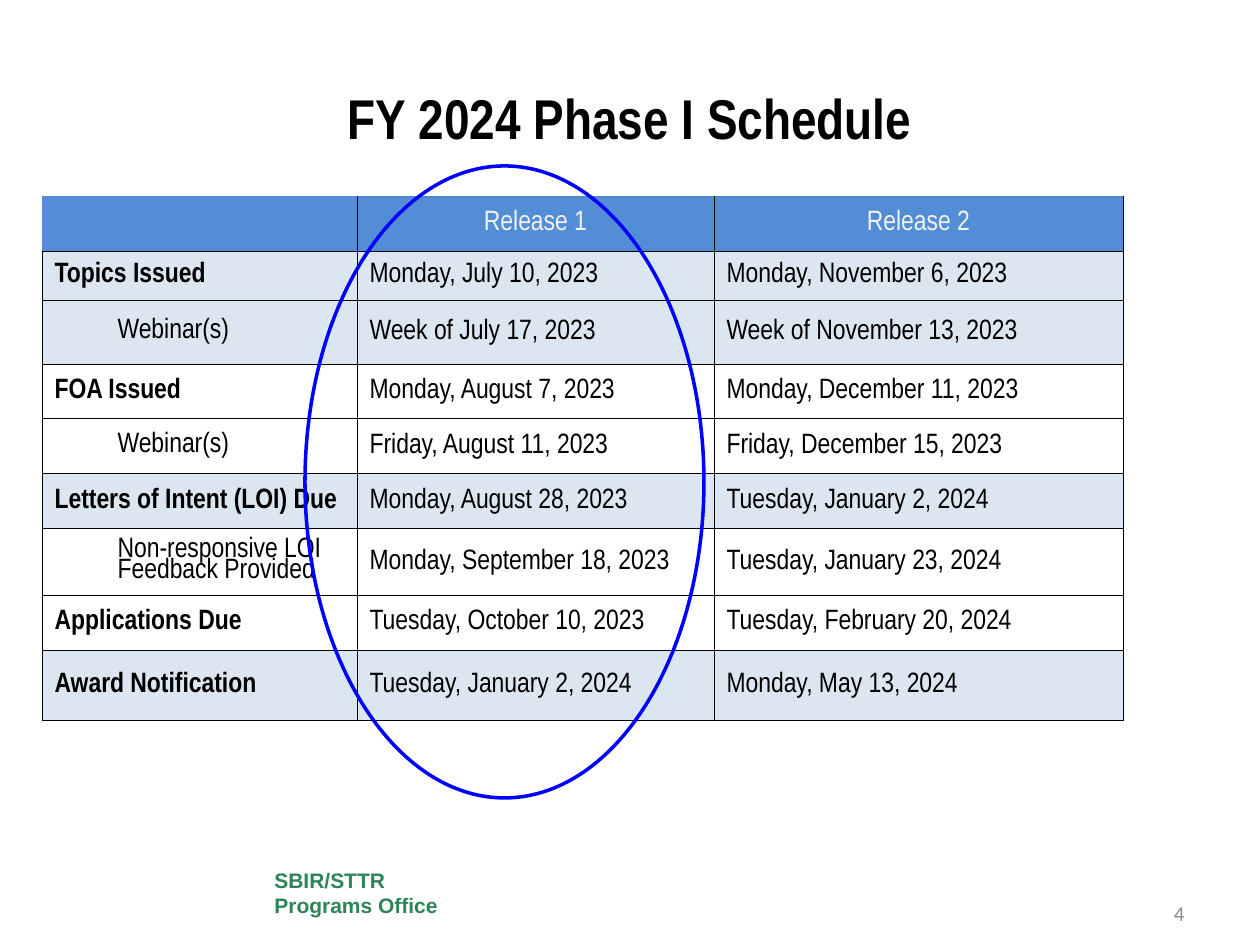
from dataclasses import dataclass
from typing import NamedTuple

from lxml import etree
from pptx import Presentation
from pptx.dml.color import RGBColor
from pptx.enum.shapes import MSO_SHAPE
from pptx.enum.text import MSO_ANCHOR, PP_ALIGN
from pptx.oxml.ns import qn
from pptx.util import Emu, Pt

LEFT, CENTER, RIGHT = PP_ALIGN.LEFT, PP_ALIGN.CENTER, PP_ALIGN.RIGHT
MIDDLE, BOTTOM = MSO_ANCHOR.MIDDLE, MSO_ANCHOR.BOTTOM
RECTANGLE, CONNECTOR_CIRCLE = MSO_SHAPE.RECTANGLE, MSO_SHAPE.FLOWCHART_CONNECTOR

PX_PER_INCH = 126


def px(length: int) -> Emu:
    return Emu(round(length * 914400 / PX_PER_INCH))


@dataclass(frozen=True)
class Theme:
    black: str = "000000"
    white: str = "FFFFFF"
    header: str = "538DD5"
    header_text: str = "F2F2F2"
    header_top: str = "4F81BD"
    band: str = "DCE6F1"
    highlight: str = "0000FF"
    office: str = "2C8458"
    page: str = "8C8C8C"
    narrow: str = "Arial Narrow"
    title_size: int = 32
    table_size: int = 16
    footer_size: int = 12
    border_width: float = 0.5
    highlight_width: int = 2


THEME = Theme()


class Box(NamedTuple):
    left: int
    top: int
    width: int
    height: int

    def emu(self) -> list[Emu]:
        return [px(length) for length in self]


class Style(NamedTuple):
    font: str
    size: int
    color: str
    bold: bool = False
    align: PP_ALIGN = LEFT


class Milestone(NamedTuple):
    label: str
    release_1: str
    release_2: str
    height: int
    banded: bool = False
    sub_step: bool = False


COLUMN_WIDTHS = (315, 357, 409)
HEADER_HEIGHT = 55
SUB_STEP_INDENT = 63
HEADINGS = ("", "Release 1", "Release 2")
MILESTONES = (
    Milestone("Topics Issued", "Monday, July 10, 2023", "Monday, November 6, 2023", 49, banded=True),
    Milestone("Webinar(s)", "Week of July 17, 2023", "Week of November 13, 2023", 64,
              banded=True, sub_step=True),
    Milestone("FOA Issued", "Monday, August 7, 2023", "Monday, December 11, 2023", 55),
    Milestone("Webinar(s)", "Friday, August 11, 2023", "Friday, December 15, 2023", 55, sub_step=True),
    Milestone("Letters of Intent (LOI) Due", "Monday, August 28, 2023", "Tuesday, January 2, 2024", 55,
              banded=True),
    Milestone("Non-responsive LOI Feedback Provided", "Monday, September 18, 2023",
              "Tuesday, January 23, 2024", 65, sub_step=True),
    Milestone("Applications Due", "Tuesday, October 10, 2023", "Tuesday, February 20, 2024", 55),
    Milestone("Award Notification", "Tuesday, January 2, 2024", "Monday, May 13, 2024", 70, banded=True),
)


def write(frame, text: str, style: Style) -> None:
    frame.text = text
    paragraph = frame.paragraphs[0]
    paragraph.alignment = style.align
    for run in paragraph.runs:
        run.font.name = style.font
        run.font.size = Pt(style.size)
        run.font.bold = style.bold
        run.font.color.rgb = RGBColor.from_string(style.color)


def add_text(slide, box: Box, text: str, style: Style, anchor: MSO_ANCHOR = MIDDLE):
    frame = slide.shapes.add_textbox(*box.emu()).text_frame
    frame.word_wrap = True
    frame.vertical_anchor = anchor
    write(frame, text, style)
    return frame


def fill_cell(cell, text: str, style: Style, fill: str, borders: dict[str, str]) -> None:
    cell.vertical_anchor = MIDDLE
    write(cell.text_frame, text, style)
    cell.fill.solid()
    cell.fill.fore_color.rgb = RGBColor.from_string(fill)
    # Border lines come before the fill in the cell properties
    properties = cell._tc.get_or_add_tcPr()
    for position, side in enumerate(("L", "R", "T", "B")):
        line = etree.Element(qn(f"a:ln{side}"), w=str(Pt(THEME.border_width)))
        if side in borders:
            paint = etree.SubElement(line, qn("a:solidFill"))
            etree.SubElement(paint, qn("a:srgbClr"), val=borders[side])
        else:
            etree.SubElement(line, qn("a:noFill"))
        properties.insert(position, line)


def add_schedule(slide, left: int, top: int) -> None:
    heights = [HEADER_HEIGHT, *(milestone.height for milestone in MILESTONES)]
    box = Box(left, top, sum(COLUMN_WIDTHS), sum(heights))
    schedule = slide.shapes.add_table(len(heights), len(COLUMN_WIDTHS), *box.emu()).table
    for column, width in zip(schedule.columns, COLUMN_WIDTHS):
        column.width = px(width)
    for row, height in zip(schedule.rows, heights):
        row.height = px(height)

    # Header row: the corner cell is open on its left and top
    heading_style = Style(THEME.narrow, THEME.table_size, THEME.header_text, align=CENTER)
    corner = dict.fromkeys("RB", THEME.black)
    release = {**dict.fromkeys("LRB", THEME.black), "T": THEME.header_top}
    for column, heading in enumerate(HEADINGS):
        fill_cell(schedule.cell(0, column), heading, heading_style, THEME.header,
                  release if heading else corner)

    # Milestone rows
    grid = dict.fromkeys("LRTB", THEME.black)
    date_style = Style(THEME.narrow, THEME.table_size, THEME.black)
    for row, milestone in enumerate(MILESTONES, start=1):
        fill = THEME.band if milestone.banded else THEME.white
        label_style = date_style._replace(bold=not milestone.sub_step)
        fill_cell(schedule.cell(row, 0), milestone.label, label_style, fill, grid)
        for column, date in enumerate((milestone.release_1, milestone.release_2), start=1):
            fill_cell(schedule.cell(row, column), date, date_style, fill, grid)
        if milestone.sub_step:
            label = schedule.cell(row, 0).text_frame.paragraphs[0]
            label.level = 1
            label.line_spacing = 0.8
            label._p.get_or_add_pPr().set("marL", str(px(SUB_STEP_INDENT)))


def add_office(slide, box: Box) -> None:
    office = slide.shapes.add_shape(RECTANGLE, *box.emu())
    office.shadow.inherit = False
    office.fill.solid()
    office.fill.fore_color.rgb = RGBColor.from_string(THEME.white)
    office.line.fill.background()
    office.text_frame.word_wrap = True
    office.text_frame.vertical_anchor = MIDDLE
    write(office.text_frame, "SBIR/STTR Programs Office",
          Style("Arial", THEME.footer_size, THEME.office, bold=True))


def add_highlight(slide, box: Box) -> None:
    highlight = slide.shapes.add_shape(CONNECTOR_CIRCLE, *box.emu())
    highlight.shadow.inherit = False
    highlight.fill.background()
    highlight.line.color.rgb = RGBColor.from_string(THEME.highlight)
    highlight.line.width = Pt(THEME.highlight_width)


def main() -> None:
    deck = Presentation()
    deck.slide_width, deck.slide_height = px(1260), px(945)
    slide = deck.slides.add_slide(deck.slide_layouts[6])

    # Footer and title
    add_office(slide, Box(262, 863, 199, 60))
    add_text(slide, Box(63, 38, 1134, 158), "FY 2024 Phase I Schedule",
             Style(THEME.narrow, THEME.title_size, THEME.black, bold=True, align=CENTER))
    page = add_text(slide, Box(903, 876, 294, 50), "4",
                    Style("Calibri", THEME.footer_size, THEME.page, align=RIGHT), BOTTOM)
    page.margin_bottom = 0

    # Schedule with the first release circled
    add_schedule(slide, left=42, top=196)
    add_highlight(slide, Box(305, 166, 399, 632))

    deck.save("out.pptx")


if __name__ == "__main__":
    main()
